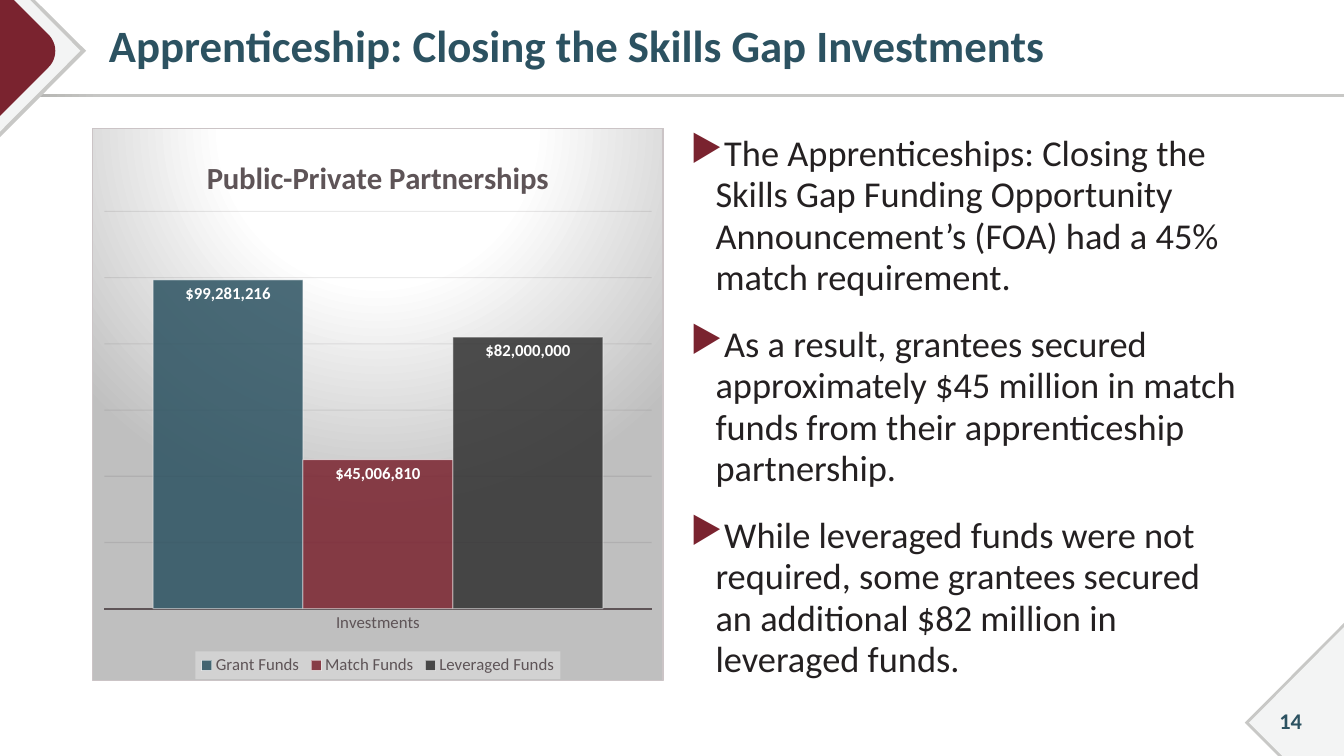
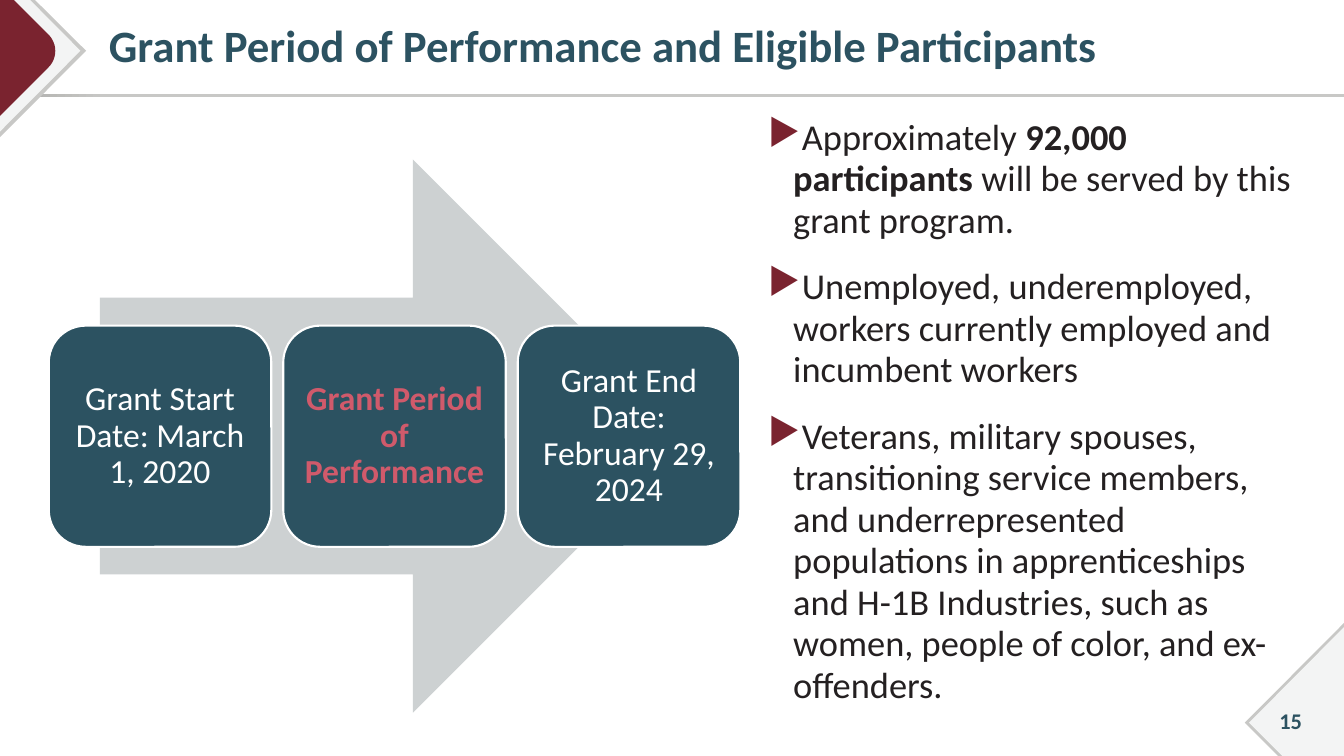
from typing import NamedTuple

from lxml import etree
from pptx import Presentation
from pptx.chart.data import CategoryChartData
from pptx.dml.color import RGBColor
from pptx.enum.chart import XL_CHART_TYPE, XL_LABEL_POSITION, XL_LEGEND_POSITION, XL_TICK_MARK
from pptx.enum.shapes import MSO_SHAPE
from pptx.enum.text import MSO_ANCHOR, PP_ALIGN
from pptx.oxml import parse_xml
from pptx.oxml.ns import nsdecls, qn
from pptx.util import Pt

FONT = "Calibri"
TEAL, RED, INK, WHITE = "2C5261", "7A232F", "242021", "FFFFFF"
BROWN, SILVER, MIST, CHARCOAL = "5E5457", "C8C8C6", "F3F4F4", "303030"
DOLLARS = '"$"#,##0'


class Box(NamedTuple):
    x: float
    y: float
    w: float
    h: float


class Run(NamedTuple):
    text: str
    bold: bool = False


class Outline(NamedTuple):
    color: str
    points: list


class Step(NamedTuple):
    text: str
    color: str = WHITE
    bold: bool = False


class Fund(NamedTuple):
    name: str
    amount: int
    color: str


def bezier(p0, p1, p2, p3, n: int = 12) -> list:
    """Points along a cubic curve."""
    def at(t, i):
        u = 1 - t
        return u**3 * p0[i] + 3 * u * u * t * p1[i] + 3 * u * t * t * p2[i] + t**3 * p3[i]
    return [(at(k / n, 0), at(k / n, 1)) for k in range(n + 1)]


# Corner pieces, from back to front
OUTLINES = [
    Outline(SILVER, [(0, 0), (25, 0), (61.5, 36.3), (0, 98)]),
    Outline(MIST, [(0, 0), (21.5, 0), (57.5, 36.3), (0, 94)]),
    Outline(RED, [(0, 0), (10, 0),
                  *bezier((34.5, 24.5), (41.2, 31), (41.2, 41.8), (34.5, 48.3)), (0, 82.8)]),
    Outline(SILVER, [(960, 445), (960, 540), (913, 540), (889.2, 516.2)]),
    Outline(MIST, [(960, 448), (960, 540), (916, 540), (892.2, 516.2)]),
]


# Colour helpers
def rgb(color: str) -> RGBColor:
    return RGBColor.from_string(color)


def paint(part, color: str, alpha: int = 100) -> None:
    """Solid colour for a fill; alpha in percent."""
    part.solid()
    part.fore_color.rgb = rgb(color)
    if alpha < 100:
        clr = part._xPr.find(qn("a:solidFill"))[0]
        etree.SubElement(clr, qn("a:alpha"), val=str(alpha * 1000))


def gradient(stops, shade: str):
    gs = "".join(f'<a:gs pos="{pos * 1000}"><a:srgbClr val="{color}"/></a:gs>'
                 for pos, color in stops)
    return parse_xml(f'<a:gradFill {nsdecls("a")} rotWithShape="1">'
                     f'<a:gsLst>{gs}</a:gsLst>{shade}</a:gradFill>')


# Text helpers
def style(font, size: float, color: str, bold: bool = False) -> None:
    font.name, font.size, font.bold = FONT, Pt(size), bold
    font.color.rgb = rgb(color)


def add_bullet(p) -> None:
    pPr = p._p.get_or_add_pPr()
    pPr.set("marL", str(Pt(18)))
    pPr.set("indent", str(-Pt(18)))
    clr = etree.SubElement(pPr, qn("a:buClr"))
    etree.SubElement(clr, qn("a:srgbClr"), val=RED)
    etree.SubElement(pPr, qn("a:buChar"), char="▶")


def write(tf, paragraphs, *, size: float, color: str, align=PP_ALIGN.LEFT,
          anchor=MSO_ANCHOR.TOP, spacing: float = 1.0, before: float = 0,
          bullet: bool = False, insets=(7.2, 3.6, 7.2, 3.6)) -> None:
    tf.word_wrap = True
    tf.vertical_anchor = anchor
    tf.margin_left, tf.margin_top, tf.margin_right, tf.margin_bottom = map(Pt, insets)
    for i, runs in enumerate(paragraphs):
        p = tf.add_paragraph() if i else tf.paragraphs[0]
        if bullet:
            add_bullet(p)
        p.alignment, p.line_spacing = align, spacing
        p.space_before = Pt(before if i else 0)
        for run in runs:
            r = p.add_run()
            r.text = run.text
            style(r.font, size, color, run.bold)


def add_text(s, box: Box, paragraphs, **fmt) -> None:
    write(s.shapes.add_textbox(*map(Pt, box)).text_frame, paragraphs, **fmt)


def add_body(s, box: Box, paragraphs) -> None:
    add_text(s, box, paragraphs, size=26, color=INK, spacing=0.95, before=18, bullet=True)


# Shape helpers
def finish(sp, color: str, line: str = "") -> None:
    sp.shadow.inherit = False
    paint(sp.fill, color)
    if line:
        paint(sp.line.fill, line)
        sp.line.width = Pt(1.5)
    else:
        sp.line.fill.background()


def add_shape(s, kind, box: Box, color: str, line: str = ""):
    sp = s.shapes.add_shape(kind, *map(Pt, box))
    finish(sp, color, line)
    return sp


def add_outline(s, outline: Outline) -> None:
    start, *rest = [(Pt(x), Pt(y)) for x, y in outline.points]
    builder = s.shapes.build_freeform(*start)
    builder.add_line_segments(rest, close=True)
    finish(builder.convert_to_shape(), outline.color)


def new_slide(prs, title: str, number: int):
    """Blank slide with the shared rule, corners, number and title."""
    s = prs.slides.add_slide(prs.slide_layouts[6])
    rule = add_shape(s, MSO_SHAPE.RECTANGLE, Box(0, 67, 960, 2.2), SILVER)
    spPr = rule._element.spPr
    spPr.replace(spPr.find(qn("a:solidFill")),
                 gradient([(0, "ABABA8"), (8, SILVER), (100, SILVER)], '<a:lin ang="0"/>'))
    for outline in OUTLINES:
        add_outline(s, outline)
    add_text(s, Box(896.4, 500.4, 51, 29), [[Run(str(number), True)]], size=16, color=TEAL,
             align=PP_ALIGN.CENTER, anchor=MSO_ANCHOR.MIDDLE)
    add_text(s, Box(63.4, 3.6, 872.6, 62), [[Run(title, True)]], size=32, color=TEAL,
             anchor=MSO_ANCHOR.MIDDLE, spacing=0.9, insets=(14.4, 3.6, 7.2, 3.6))
    return s


# Chart
def place(element, index: int, inner: bool = False, **fractions: float) -> None:
    """Manual layout of a chart part, in fractions of the chart."""
    for old in element.findall(qn("c:layout")):
        element.remove(old)
    target = '<c:layoutTarget val="inner"/>' if inner else ""
    modes = "".join(f'<c:{k}Mode val="edge"/>' for k in ("x", "y"))
    values = "".join(f'<c:{k} val="{v}"/>' for k, v in fractions.items())
    element.insert(index, parse_xml(
        f'<c:layout {nsdecls("c")}><c:manualLayout>{target}{modes}{values}'
        '</c:manualLayout></c:layout>'))


def add_fund_chart(s, box: Box, funds: list) -> None:
    data = CategoryChartData(number_format=DOLLARS)
    data.categories = ["Investments"]
    for fund in funds:
        data.add_series(fund.name, [fund.amount])
    chart = s.shapes.add_chart(XL_CHART_TYPE.COLUMN_CLUSTERED, *map(Pt, box), data).chart
    style(chart.font, 10, INK)

    # Background and border
    space = chart._chartSpace
    spPr = parse_xml(f'<c:spPr {nsdecls("c", "a")}><a:ln w="9525"><a:solidFill>'
                     '<a:srgbClr val="CBC4C6"/></a:solidFill></a:ln></c:spPr>')
    spPr.insert(0, gradient(
        [(0, WHITE), (39, WHITE), (100, "BFBFBF")],
        '<a:path path="circle"><a:fillToRect l="50000" t="-80000" r="50000" b="180000"/></a:path>'))
    space.chart.addnext(spPr)

    # Title and plot area
    title = chart.chart_title
    title.text_frame.text = "Public-Private Partnerships"
    style(title.text_frame.paragraphs[0].runs[0].font, 22, BROWN, True)
    title.include_in_layout = False
    place(title._element, 1, x=0.19, y=0.04)
    place(space.chart.plotArea, 0, inner=True, x=0.02, y=0.15, w=0.96, h=0.72)

    # Axes
    cat, val = chart.category_axis, chart.value_axis
    cat.major_tick_mark = cat.minor_tick_mark = XL_TICK_MARK.NONE
    style(cat.tick_labels.font, 12, BROWN)
    paint(cat.format.line.fill, BROWN)
    cat.format.line.width = Pt(1.5)
    val.minimum_scale, val.maximum_scale, val.major_unit = 0, 120_000_000, 20_000_000
    val.visible = False
    val.has_major_gridlines = True
    grid = val.major_gridlines.format.line
    paint(grid.fill, "302A2C", 10)
    grid.width = Pt(0.75)

    # Columns
    plot = chart.plots[0]
    plot.gap_width, plot.overlap, plot.vary_by_categories = 65, 0, False
    for fund, series in zip(funds, plot.series):
        paint(series.format.fill, fund.color, 85)
        paint(series.format.line.fill, WHITE, 50)
        series.format.line.width = Pt(0.75)
        labels = series.data_labels
        labels.show_value = True
        labels.position = XL_LABEL_POSITION.INSIDE_END
        labels.number_format, labels.number_format_is_linked = DOLLARS, False
        style(labels.font, 12, WHITE, True)

    # Legend
    chart.has_legend = True
    legend = chart.legend
    legend.position, legend.include_in_layout = XL_LEGEND_POSITION.BOTTOM, False
    style(legend.font, 12, BROWN)
    place(legend._element, 1, x=0.18, y=0.95, w=0.64, h=0.05)
    legend._element.find(qn("c:txPr")).addprevious(parse_xml(
        f'<c:spPr {nsdecls("c", "a")}><a:solidFill><a:srgbClr val="F2F2F2">'
        '<a:alpha val="39000"/></a:srgbClr></a:solidFill></c:spPr>'))


def add_steps(s, steps: list) -> None:
    add_shape(s, MSO_SHAPE.RIGHT_ARROW, Box(71.3, 113.8, 421.2, 395.3), "CDD1D2")
    for i, step in enumerate(steps):
        sp = add_shape(s, MSO_SHAPE.ROUNDED_RECTANGLE,
                       Box(34.8 + i * 167.5, 232.6, 159, 158), TEAL, WHITE)
        write(sp.text_frame, [[Run(step.text, step.bold)]], size=24, color=step.color,
              align=PP_ALIGN.CENTER, anchor=MSO_ANCHOR.MIDDLE, spacing=0.9, insets=(7.2,) * 4)


def main() -> None:
    prs = Presentation()
    prs.slide_width, prs.slide_height = Pt(960), Pt(540)

    # Investments
    s = new_slide(prs, "Apprenticeship: Closing the Skills Gap Investments", 14)
    add_fund_chart(s, Box(66, 91.5, 408, 395), [
        Fund("Grant Funds", 99281216, TEAL),
        Fund("Match Funds", 45006810, RED),
        Fund("Leveraged Funds", 82000000, CHARCOAL),
    ])
    add_body(s, Box(486, 91.5, 408, 415.5), [
        [Run("The Apprenticeships: Closing the Skills Gap Funding Opportunity "
             "Announcement’s (FOA) had a 45% match requirement.")],
        [Run("As a result, grantees secured approximately $45 million in match funds "
             "from their apprenticeship partnership.")],
        [Run("While leveraged funds were not required, some grantees secured an "
             "additional $82 million in leveraged funds.")],
    ])

    # Period of performance
    s = new_slide(prs, "Grant Period of Performance and Eligible Participants", 15)
    add_body(s, Box(541.5, 80, 394.5, 435), [
        [Run("Approximately "), Run("92,000 participants ", True),
         Run("will be served by this grant program.")],
        [Run("Unemployed, underemployed, workers currently employed and incumbent workers")],
        [Run("Veterans, military spouses, transitioning service members, and "
             "underrepresented populations in apprenticeships and H-1B Industries, "
             "such as women, people of color, and ex-offenders.")],
    ])
    add_steps(s, [
        Step("Grant Start Date: March 1, 2020"),
        Step("Grant Period of Performance", "D05A6B", True),
        Step("Grant End Date: February 29, 2024"),
    ])
    prs.save("out.pptx")


if __name__ == "__main__":
    main()
